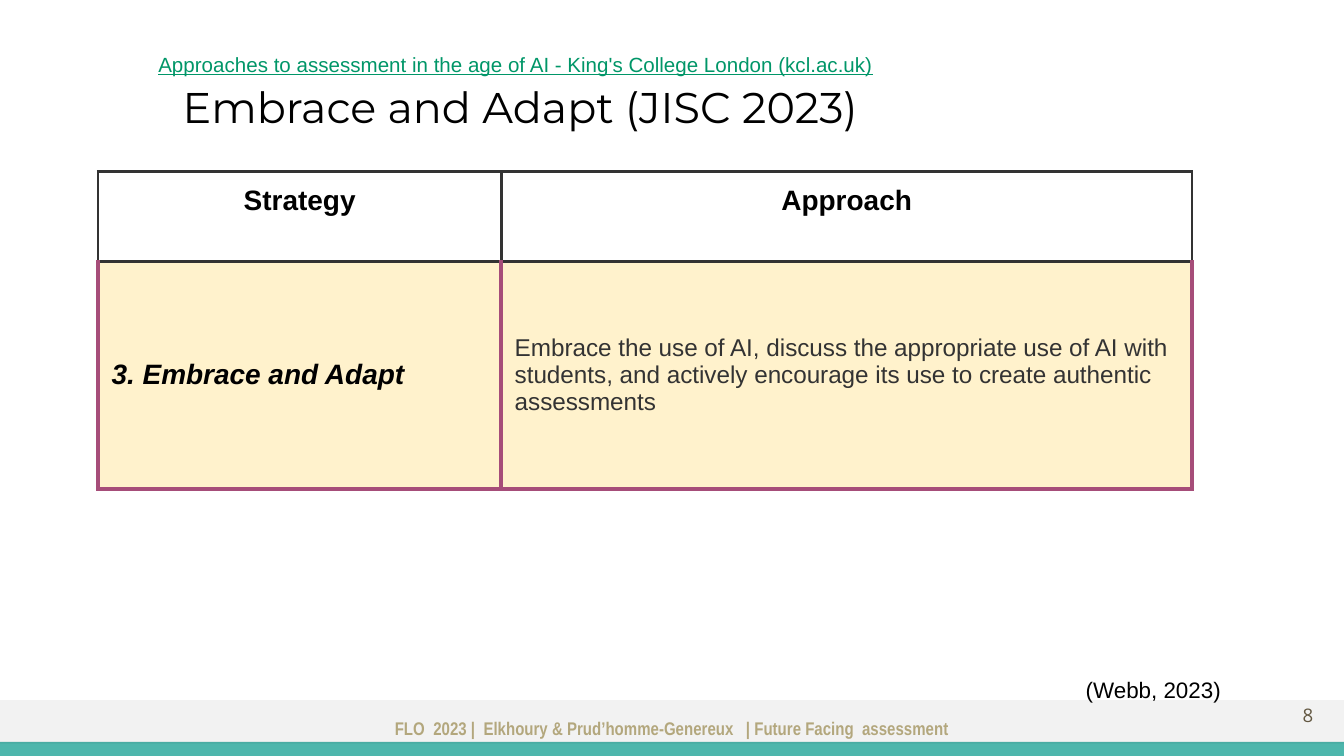
from lxml.etree import SubElement
from pptx import Presentation
from pptx.dml.color import RGBColor
from pptx.enum.shapes import MSO_SHAPE
from pptx.enum.text import MSO_ANCHOR, PP_ALIGN
from pptx.oxml.ns import qn
from pptx.util import Inches, Pt

WIDTH, HEIGHT = Inches(10), Inches(5.625)
INK, CHARCOAL, PLUM, CREAM = "000000", "333333", "A64D79", "FFF2CC"
TEAL, GREEN, TAN, BROWN = "4DB6AC", "009668", "B3A77D", "695D46"


def rgb(value):
    return RGBColor.from_string(value)


def across(percent):
    return round(WIDTH * percent / 100)


def down(percent):
    return round(HEIGHT * percent / 100)


def place(box):
    left, top, width, height = box
    return across(left), down(top), across(width), down(height)


def apply(target, values):
    for key, value in values.items():
        setattr(target, key, value)


def write(frame, wording, color, font, paragraph=None):
    paragraph_format = frame.paragraphs[0]
    apply(paragraph_format, paragraph or {})
    run = paragraph_format.add_run()
    run.text = wording
    apply(run.font, {"name": "Arial", **font})
    run.font.color.rgb = rgb(color)


def pad(target):
    apply(target, dict.fromkeys(
        ("margin_left", "margin_top", "margin_right", "margin_bottom"), Inches(0.1)))


def label(slide, box, wording, color, font, paragraph=None, anchor=MSO_ANCHOR.TOP):
    frame = slide.shapes.add_textbox(*place(box)).text_frame
    pad(frame)
    apply(frame, {"word_wrap": True, "vertical_anchor": anchor})
    write(frame, wording, color, font, paragraph)


def band(slide, box, color, opacity=100):
    bar = slide.shapes.add_shape(MSO_SHAPE.RECTANGLE, *place(box))
    bar.shadow.inherit = False
    bar.fill.solid()
    bar.fill.fore_color.rgb = rgb(color)
    bar.line.fill.background()
    if opacity < 100:
        tint = bar.fill._xPr.find(qn("a:solidFill"))[0]
        SubElement(tint, qn("a:alpha"), val=str(opacity * 1000))
    return bar


def footer(slide, box):
    left, top, width, height = box
    band(slide, (left, top + height * 0.75, width, height * 0.25), TEAL)
    label(slide, (92.7, 90.7, 6, 7.65), "8", BROWN,
          {"size": Pt(10), "name": "Open Sans"},
          {"alignment": PP_ALIGN.RIGHT}, MSO_ANCHOR.MIDDLE)
    credit = band(slide, (left, top, width, height * 0.78), INK, 5).text_frame
    pad(credit)
    apply(credit, {"word_wrap": True, "vertical_anchor": MSO_ANCHOR.TOP})
    write(credit,
          "FLO  2023 |  Elkhoury & Prud’homme-Genereux   | Future Facing  assessment",
          TAN, {"size": Pt(9.8), "name": "Arial Narrow", "bold": True},
          {"alignment": PP_ALIGN.CENTER, "line_spacing": 1.15, "space_after": Pt(16)})


def heading(slide, box):
    left, top, width, height = box
    label(slide, (left, top, width, height * 0.32),
          "Approaches to assessment in the age of AI - King's College London (kcl.ac.uk)",
          GREEN, {"size": Pt(11), "underline": True})
    label(slide, (left + 1.8, top + height * 0.17, 56.1, height * 0.83),
          "Embrace and Adapt (JISC 2023)", INK,
          {"size": Pt(23), "name": "Montserrat"})


def border(cell, sides):
    properties = cell._tc.get_or_add_tcPr()
    for side in "LRTB":
        color, weight = sides[side]
        line = SubElement(properties, qn(f"a:ln{side}"), w=str(Pt(weight)))
        SubElement(SubElement(line, qn("a:solidFill")), qn("a:srgbClr"), val=color)


def strategy_table(slide, box, columns, rows):
    table = slide.shapes.add_table(len(rows), len(columns), *place(box)).table
    apply(table, {"first_row": False, "horz_banding": False})
    for column, share in zip(table.columns, columns):
        column.width = across(box[2] * share / sum(columns))
    for row, share in zip(table.rows, rows):
        row.height = down(box[3] * share / sum(rows))
    thin, thick = (CHARCOAL, 1.5), (PLUM, 2.25)
    header_sides = dict.fromkeys("LRTB", thin)
    body_sides = {**dict.fromkeys("LRB", thick), "T": thin}
    title = {"size": Pt(15), "bold": True}
    centered = {"alignment": PP_ALIGN.CENTER}
    content = [
        [("Strategy", INK, title, centered), ("Approach", INK, title, centered)],
        [("3. Embrace and Adapt", INK, {**title, "italic": True}),
         ("Embrace the use of AI, discuss the appropriate use of AI with students, "
          "and actively encourage its use to create authentic assessments",
          CHARCOAL, {"size": Pt(13)})],
    ]
    for r, entries in enumerate(content):
        for c, entry in enumerate(entries):
            cell = table.cell(r, c)
            pad(cell)
            cell.vertical_anchor = MSO_ANCHOR.MIDDLE if r else MSO_ANCHOR.TOP
            border(cell, body_sides if r else header_sides)
            if r:
                cell.fill.solid()
                cell.fill.fore_color.rgb = rgb(CREAM)
            else:
                cell.fill.background()
            write(cell.text_frame, *entry)


def source(slide, box):
    label(slide, box, "(Webb, 2023)", INK, {"size": Pt(12)})


def main():
    deck = Presentation()
    apply(deck, {"slide_width": WIDTH, "slide_height": HEIGHT})
    slide = deck.slides.add_slide(deck.slide_layouts[6])
    footer(slide, (0, 92.6, 100, 7.4))
    heading(slide, (10.8, 5.2, 71.3, 21.7))
    strategy_table(slide, (7.3, 22.7, 81.4, 41.96), (3, 5.14), (0.67, 1.69))
    source(slide, (79.8, 87.6, 15.4, 4.6))
    deck.save("out.pptx")


if __name__ == "__main__":
    main()
